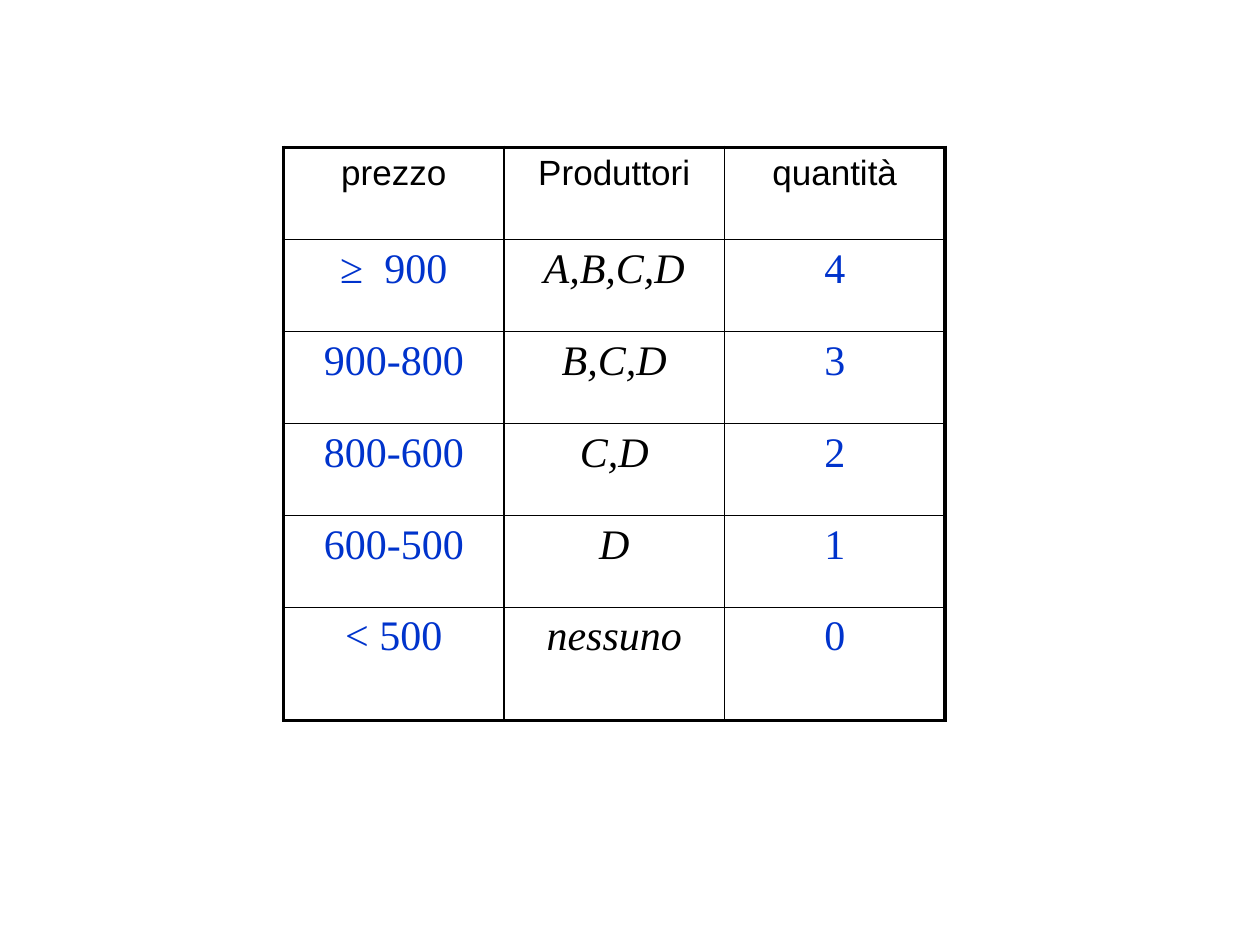
from dataclasses import dataclass

from pptx import Presentation
from pptx.dml.color import RGBColor
from pptx.enum.text import PP_ALIGN
from pptx.oxml import parse_xml
from pptx.oxml.ns import nsdecls
from pptx.util import Inches, Pt


@dataclass(frozen=True)
class Theme:
    ink: str = "000000"
    blue: str = "0033CC"
    paper: str = "FFFFFF"
    sans: str = "Arial"
    serif: str = "Times New Roman"
    head: int = 20
    body: int = 24
    thin: float = 1
    thick: float = 2.25


THEME = Theme()

ROWS = [
    ("prezzo", "Produttori", "quantità"),
    ("≥  900", "A,B,C,D", "4"),
    ("900-800", "B,C,D", "3"),
    ("800-600", "C,D", "2"),
    ("600-500", "D", "1"),
    ("< 500", "nessuno", "0"),
]


def add_edge(cell, side, width):
    cell._tc.get_or_add_tcPr().append(parse_xml(
        f'<a:{side} {nsdecls("a")} w="{Pt(width)}"><a:solidFill>'
        f'<a:srgbClr val="{THEME.ink}"/></a:solidFill></a:{side}>'
    ))


def fill_cell(cell, text, row, col):
    cell.text = text
    para = cell.text_frame.paragraphs[0]
    para.alignment = PP_ALIGN.CENTER
    font = para.font
    head = row == 0
    maker = col == 1
    font.name = THEME.sans if head else THEME.serif
    font.size = Pt(THEME.head if head else THEME.body)
    font.bold = False
    font.italic = maker and not head
    font.color.rgb = RGBColor.from_string(
        THEME.ink if head or maker else THEME.blue
    )
    outer = {
        "lnL": col == 0,
        "lnR": col == len(ROWS[0]) - 1,
        "lnT": head,
        "lnB": row == len(ROWS) - 1,
    }
    for side, edge in outer.items():
        add_edge(cell, side, THEME.thick if edge else THEME.thin)
    cell.fill.solid()
    cell.fill.fore_color.rgb = RGBColor.from_string(THEME.paper)


def add_prices(slide, left, top, width, height):
    count = len(ROWS[0])
    frame = slide.shapes.add_table(
        len(ROWS), count, left, top, width, height
    )
    table = frame.table
    table.first_row = False
    table.horz_banding = False
    for col in table.columns:
        col.width = width // count
    for row in table.rows:
        row.height = Inches(0.73)
    table.rows[len(ROWS) - 1].height = Inches(0.9)
    for i, row in enumerate(ROWS):
        for j, text in enumerate(row):
            fill_cell(table.cell(i, j), text, i, j)


def main():
    deck = Presentation()
    deck.slide_width = Inches(10)
    deck.slide_height = Inches(7.5)
    slide = deck.slides.add_slide(deck.slide_layouts[6])
    add_prices(slide, Inches(2.25), Inches(1.17), Inches(5.25), Inches(4.55))
    deck.save("out.pptx")


if __name__ == "__main__":
    main()
